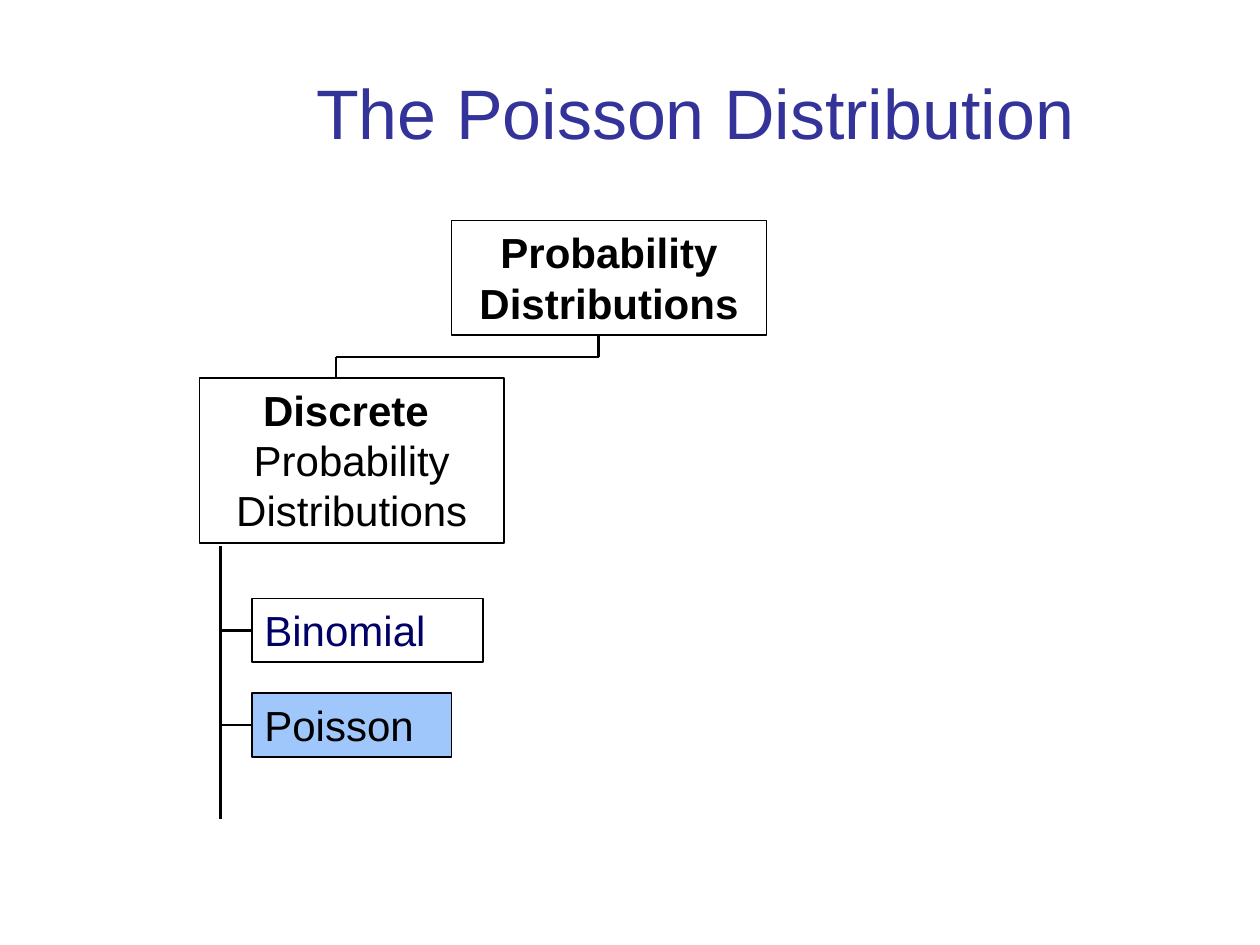
from dataclasses import dataclass

from lxml.etree import SubElement
from pptx import Presentation
from pptx.dml.color import RGBColor
from pptx.enum.shapes import MSO_CONNECTOR as Connector, MSO_SHAPE as Shape
from pptx.enum.text import MSO_ANCHOR as Anchor, MSO_AUTO_SIZE as AutoSize, PP_ALIGN as Align
from pptx.oxml.ns import qn
from pptx.util import Pt

BLACK = RGBColor(0x00, 0x00, 0x00)
NAVY = RGBColor(0x00, 0x00, 0x66)
INDIGO = RGBColor(0x33, 0x33, 0x99)
SKY = RGBColor(0xA0, 0xC7, 0xFC)
FONT = "Arial"


@dataclass
class Node:
    left: float
    top: float
    width: float
    height: float
    lines: tuple[str, ...]
    bold_lines: int = 0
    align: Align = Align.CENTER
    color: RGBColor = BLACK
    fill: RGBColor | None = None


def write_lines(frame, lines: tuple[str, ...], size: float, color: RGBColor,
                align: Align, bold_lines: int = 0) -> None:
    frame.word_wrap = True
    frame.auto_size = AutoSize.SHAPE_TO_FIT_TEXT
    frame.vertical_anchor = Anchor.TOP
    frame.text = "\n".join(lines)
    for index, paragraph in enumerate(frame.paragraphs):
        paragraph.alignment = align
        for run in paragraph.runs:
            run.font.name = FONT
            run.font.size = Pt(size)
            run.font.bold = index < bold_lines
            run.font.color.rgb = color


def draw_node(slide, node: Node):
    box = slide.shapes.add_shape(Shape.RECTANGLE, Pt(node.left), Pt(node.top),
                                 Pt(node.width), Pt(node.height))
    box.shadow.inherit = False
    if node.fill is None:
        box.fill.background()
    else:
        box.fill.solid()
        box.fill.fore_color.rgb = node.fill
    box.line.color.rgb = BLACK
    box.line.width = Pt(1)
    write_lines(box.text_frame, node.lines, 24, node.color, node.align, node.bold_lines)
    return box


def draw_line(slide, x1: float, y1: float, x2: float, y2: float):
    line = slide.shapes.add_connector(Connector.STRAIGHT, Pt(x1), Pt(y1), Pt(x2), Pt(y2))
    line.line.color.rgb = BLACK
    line.line.width = Pt(1.5)
    SubElement(line._element.spPr, qn("a:effectLst"))
    return line


def main() -> None:
    deck = Presentation()
    deck.slide_width, deck.slide_height = Pt(720), Pt(540)
    slide = deck.slides.add_slide(deck.slide_layouts[6])

    # Title
    title = slide.shapes.add_textbox(Pt(120), Pt(36), Pt(554.4), Pt(55))
    write_lines(title.text_frame, ("The Poisson Distribution",), 40, INDIGO, Align.CENTER)

    # Branch from all distributions to the discrete ones
    root_x, discrete_x, branch_y = 342, 192, 204
    draw_line(slide, root_x, 192, root_x, branch_y)
    draw_line(slide, discrete_x, branch_y, root_x, branch_y)
    draw_line(slide, discrete_x, branch_y, discrete_x, 216)
    draw_node(slide, Node(258, 126, 180, 65.5, ("Probability Distributions",), bold_lines=1))
    draw_node(slide, Node(114, 216, 174, 94.5, ("Discrete ", "Probability Distributions"),
                          bold_lines=1))

    # Trunk with the discrete distributions
    trunk_x = 126
    draw_line(slide, trunk_x, 312, trunk_x, 468)
    members = (
        Node(144, 342, 132, 36.5, ("Binomial",), align=Align.LEFT, color=NAVY),
        Node(144, 396, 114, 36.5, ("Poisson",), align=Align.LEFT, fill=SKY),
    )
    for member in members:
        middle = member.top + member.height / 2
        box = draw_node(slide, member)
        draw_line(slide, member.left, middle, trunk_x, middle).begin_connect(box, 1)

    deck.save("out.pptx")


if __name__ == "__main__":
    main()
